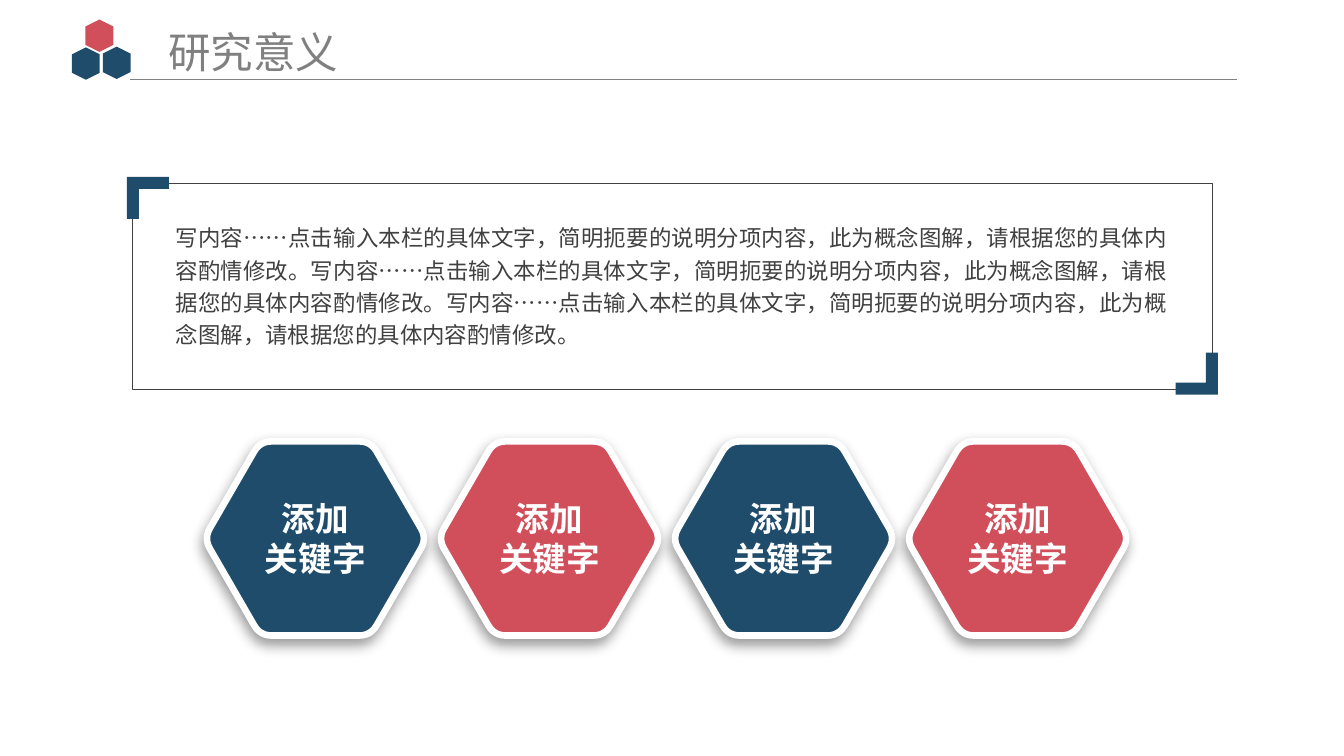
import math
from lxml import etree
from pptx import Presentation
from pptx.dml.color import RGBColor
from pptx.enum.shapes import MSO_CONNECTOR, MSO_SHAPE
from pptx.enum.text import MSO_AUTO_SIZE, PP_ALIGN
from pptx.oxml.ns import qn
from pptx.util import Cm, Pt

HEXAGON = MSO_SHAPE.HEXAGON
RECTANGLE = MSO_SHAPE.ROUNDED_RECTANGLE
STRAIGHT = MSO_CONNECTOR.STRAIGHT
FIT_SHAPE = MSO_AUTO_SIZE.SHAPE_TO_FIT_TEXT
LEFT, CENTER, JUSTIFY = PP_ALIGN.LEFT, PP_ALIGN.CENTER, PP_ALIGN.JUSTIFY

NAVY = RGBColor(0x1F, 0x4C, 0x6B)
RED = RGBColor(0xD1, 0x4E, 0x5B)
GRAY = RGBColor(0x80, 0x80, 0x80)
DARK = RGBColor(0x40, 0x40, 0x40)
WHITE = RGBColor(0xFF, 0xFF, 0xFF)
BLACK = RGBColor(0x00, 0x00, 0x00)
FONT = "Noto Sans CJK SC"

deck = Presentation()
deck.slide_width, deck.slide_height = Cm(35.71), Cm(20.09)
page = deck.slides.add_slide(deck.slide_layouts[6])


def add_text(text, left, top, width, height, size, color,
             bold=False, align=LEFT, spacing=None, inset=True, wrap=True):
    box = page.shapes.add_textbox(Cm(left), Cm(top), Cm(width), Cm(height))
    frame = box.text_frame
    frame.word_wrap = wrap
    frame.auto_size = FIT_SHAPE
    if not inset:
        frame.margin_left = frame.margin_right = 0
        frame.margin_top = frame.margin_bottom = 0
    frame.text = text
    for para in frame.paragraphs:
        para.alignment = align
        if spacing:
            para.line_spacing = spacing
        for span in para.runs:
            span.font.name = FONT
            span.font.size = Pt(size)
            span.font.bold = bold
            span.font.color.rgb = color
            east_asian = etree.SubElement(span.font._element, qn("a:ea"))
            east_asian.set("typeface", FONT)


def add_outline(points, color):
    corners = [(Cm(x), Cm(y)) for x, y in points]
    builder = page.shapes.build_freeform(*corners[0])
    builder.add_line_segments(corners[1:], close=True)
    shape = builder.convert_to_shape()
    shape.shadow.inherit = False
    shape.fill.solid()
    shape.fill.fore_color.rgb = color
    shape.line.fill.background()
    return shape


for left, top, color in [(1.85, 1.32, NAVY), (2.21, 0.58, RED), (2.67, 1.3, NAVY)]:
    emblem = page.shapes.add_shape(HEXAGON, Cm(left), Cm(top), Cm(0.86), Cm(0.74))
    emblem.rotation = 90
    emblem.shadow.inherit = False
    emblem.fill.solid()
    emblem.fill.fore_color.rgb = color
    emblem.line.fill.background()

title_rule = page.shapes.add_connector(STRAIGHT, Cm(3.45), Cm(2.11), Cm(32.87), Cm(2.11))
title_rule.line.color.rgb = GRAY
title_rule.line.width = Pt(0.5)
etree.SubElement(title_rule._element.spPr, qn("a:effectLst"))

add_text("研究意义", 4.22, 0.58, 5.08, 1.63, 32, GRAY, wrap=False)

frame_box = page.shapes.add_shape(RECTANGLE, Cm(3.51), Cm(4.88), Cm(28.7), Cm(5.46))
frame_box.adjustments[0] = 0
frame_box.shadow.inherit = False
frame_box.fill.background()
frame_box.line.color.rgb = DARK
frame_box.line.width = Pt(0.25)

sentence = "写内容……点击输入本栏的具体文字，简明扼要的说明分项内容，此为概念图解，请根据您的具体内容酌情修改。"
add_text(sentence * 3, 4.67, 5.82, 26.37, 3.45, 16.9, DARK,
         align=JUSTIFY, spacing=1.2, inset=False)

ARM, THICK = 1.12, 0.32
bracket = [(0, 0), (ARM, 0), (ARM, THICK), (THICK, THICK), (THICK, ARM), (0, ARM)]
for corner_x, corner_y, sign in [(3.37, 4.7, 1), (32.36, 10.49, -1)]:
    add_outline([(corner_x + sign * x, corner_y + sign * y) for x, y in bracket], NAVY)

CUT, STEPS = 0.31, 6
vertices = [(1.4, 0), (4.34, 0), (5.83, 2.58), (4.34, 5.16), (1.4, 5.16), (-0.09, 2.58)]
rounded_hexagon = []
for index, (x, y) in enumerate(vertices):
    ends = []
    for near_x, near_y in (vertices[index - 1], vertices[(index + 1) % 6]):
        share = CUT / math.hypot(near_x - x, near_y - y)
        ends.append((x + share * (near_x - x), y + share * (near_y - y)))
    (start_x, start_y), (end_x, end_y) = ends
    for step in range(STEPS + 1):
        t = step / STEPS
        a, b, c = (1 - t) ** 2, 2 * t * (1 - t), t ** 2
        rounded_hexagon.append((a * start_x + b * x + c * end_x,
                                a * start_y + b * y + c * end_y))

KEY_LEFT, KEY_TOP, KEY_PITCH = 5.51, 11.73, 6.22
for index, color in enumerate([NAVY, RED, NAVY, RED]):
    left = KEY_LEFT + index * KEY_PITCH
    keyword = add_outline([(left + x, KEY_TOP + y) for x, y in rounded_hexagon], color)
    keyword.line.color.rgb = WHITE
    keyword.line.width = Pt(5)
    effects = keyword._element.spPr.find(qn("a:effectLst"))
    shadow = etree.SubElement(effects, qn("a:outerShdw"), blurRad=str(Pt(10)),
                              dist=str(Pt(5)), dir=str(110 * 60000),
                              algn="ctr", rotWithShape="0")
    shade = etree.SubElement(shadow, qn("a:srgbClr"), val=str(BLACK))
    etree.SubElement(shade, qn("a:alpha"), val="40000")
    add_text("添加\n关键字", left + 0.98, 13.23, 3.78, 2.16, 25.3, WHITE,
             bold=True, align=CENTER, inset=False)

deck.save("out.pptx")
